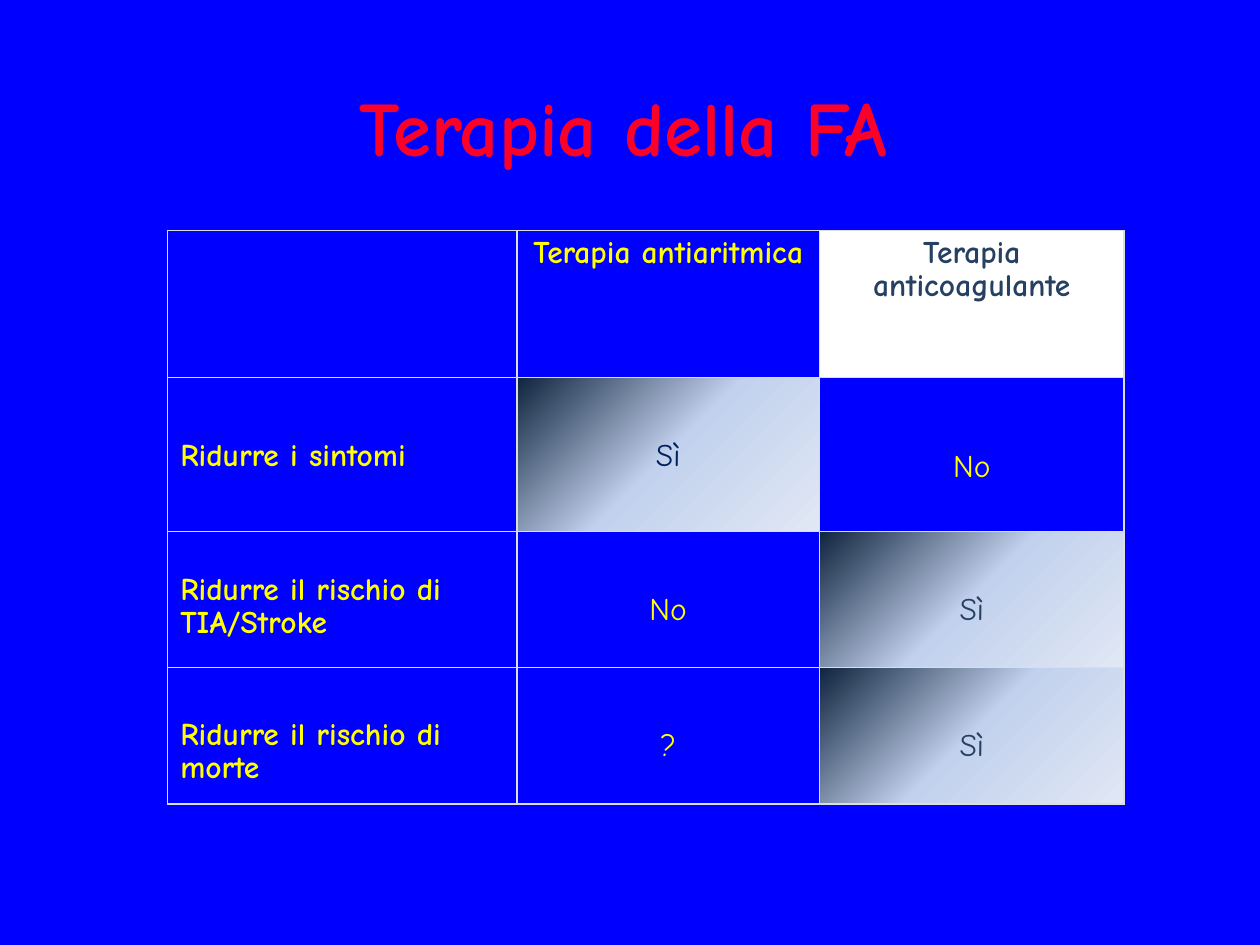
from typing import NamedTuple

from lxml import etree
from pptx import Presentation
from pptx.dml.color import RGBColor
from pptx.enum.text import MSO_ANCHOR, MSO_AUTO_SIZE, PP_ALIGN
from pptx.oxml.ns import qn
from pptx.util import Cm, Pt

LEFT, CENTER = PP_ALIGN.LEFT, PP_ALIGN.CENTER
TOP, MIDDLE = MSO_ANCHOR.TOP, MSO_ANCHOR.MIDDLE
NO_AUTOFIT = MSO_AUTO_SIZE.NONE

BLUE = RGBColor(0x00, 0x00, 0xFF)
RED = RGBColor(0xFC, 0x01, 0x28)
YELLOW = RGBColor(0xFF, 0xFF, 0x00)
WHITE = RGBColor(0xFF, 0xFF, 0xFF)
SLATE = RGBColor(0x25, 0x40, 0x61)
NAVY = RGBColor(0x00, 0x20, 0x60)
GREY = RGBColor(0xDD, 0xDD, 0xDD)
GRADIENT = (
    (0, RGBColor(0x0F, 0x24, 0x3E)),
    (50, RGBColor(0xC2, 0xD1, 0xED)),
    (100, RGBColor(0xE1, 0xE8, 0xF5)),
)

FONT = "Comic Neue"
COLUMN_WIDTHS = (7.04, 6.1, 6.14)
ROW_HEIGHTS = (2.96, 3.1, 2.75, 2.75)


class Entry(NamedTuple):
    """Text of a table cell, its colours, and the extra top margin in cm."""

    text: str
    color: RGBColor = YELLOW
    fill: object = BLUE
    drop: float = 0


ROWS = (
    (Entry(""), Entry("Terapia antiaritmica"),
     Entry("Terapia anticoagulante", SLATE, WHITE)),
    (Entry("Ridurre i sintomi", drop=0.1),
     Entry("Sì", NAVY, GRADIENT, 0.1), Entry("No", drop=0.55)),
    (Entry("Ridurre il rischio di TIA/Stroke", drop=0.3),
     Entry("No", drop=0.45), Entry("Sì", SLATE, GRADIENT, 0.45)),
    (Entry("Ridurre il rischio di morte", drop=0.65),
     Entry("?", drop=0.45), Entry("Sì", SLATE, GRADIENT, 0.45)),
)


def add_span(para, text, size, color, bold):
    """Add one formatted run to a paragraph."""
    span = para.add_run()
    span.text = text
    span.font.name = FONT
    span.font.size = Pt(size)
    span.font.bold = bold
    span.font.color.rgb = color


def add_title(page, text):
    """Place and fill the title placeholder."""
    box = page.shapes.title
    box.left, box.top, box.width, box.height = Cm(5.51), Cm(1.47), Cm(14.12), Cm(2.13)
    frame = box.text_frame
    frame.auto_size = NO_AUTOFIT
    frame.word_wrap = True
    frame.vertical_anchor = MIDDLE
    para = frame.paragraphs[0]
    para.alignment = CENTER
    add_span(para, text, 44, RED, True)


def add_solid(parent, color):
    """Append a solid fill element."""
    solid = etree.SubElement(parent, qn("a:solidFill"))
    etree.SubElement(solid, qn("a:srgbClr"), val=str(color))


def add_borders(cell):
    """Draw a thin grey line on all four sides of a cell."""
    properties = cell._tc.get_or_add_tcPr()
    for side in ("lnL", "lnR", "lnT", "lnB"):
        line = etree.SubElement(properties, qn(f"a:{side}"), w=str(Pt(1)))
        add_solid(line, GREY)


def fill_gradient(cell, stops):
    """Fill a cell with a diagonal gradient."""
    gradient = etree.SubElement(cell._tc.get_or_add_tcPr(), qn("a:gradFill"))
    stop_list = etree.SubElement(gradient, qn("a:gsLst"))
    for percent, color in stops:
        stop = etree.SubElement(stop_list, qn("a:gs"), pos=str(percent * 1000))
        etree.SubElement(stop, qn("a:srgbClr"), val=str(color))
    etree.SubElement(gradient, qn("a:lin"), ang=str(45 * 60000), scaled="0")


def fill_cell(cell, entry, is_header, is_label):
    """Format one table cell and write its text."""
    add_borders(cell)
    if entry.fill is GRADIENT:
        fill_gradient(cell, entry.fill)
    else:
        cell.fill.solid()
        cell.fill.fore_color.rgb = entry.fill
    cell.vertical_anchor = TOP if is_header else MIDDLE
    cell.margin_top = Cm(0.13 + entry.drop)
    if entry.text:
        para = cell.text_frame.paragraphs[0]
        para.alignment = LEFT if is_label else CENTER
        para.line_spacing = 0.9
        add_span(para, entry.text, 18, entry.color, is_header or is_label)


def add_therapy_table(page):
    """Add the table comparing the two therapies."""
    table = page.shapes.add_table(
        len(ROW_HEIGHTS), len(COLUMN_WIDTHS), Cm(3.38), Cm(4.65),
        Cm(sum(COLUMN_WIDTHS)), Cm(sum(ROW_HEIGHTS)),
    ).table
    table.first_row = table.horz_banding = False
    for column, width in zip(table.columns, COLUMN_WIDTHS):
        column.width = Cm(width)
    for row, height in zip(table.rows, ROW_HEIGHTS):
        row.height = Cm(height)
    for row_index, entries in enumerate(ROWS):
        for column_index, entry in enumerate(entries):
            cell = table.cell(row_index, column_index)
            fill_cell(cell, entry, row_index == 0, column_index == 0)


def main():
    """Build the slide and save the deck."""
    deck = Presentation()
    deck.slide_width, deck.slide_height = Cm(25.4), Cm(19.05)
    page = deck.slides.add_slide(deck.slide_layouts.get_by_name("Title Only"))
    page.background.fill.solid()
    page.background.fill.fore_color.rgb = BLUE
    add_title(page, "Terapia della FA")
    add_therapy_table(page)
    deck.save("out.pptx")


if __name__ == "__main__":
    main()
